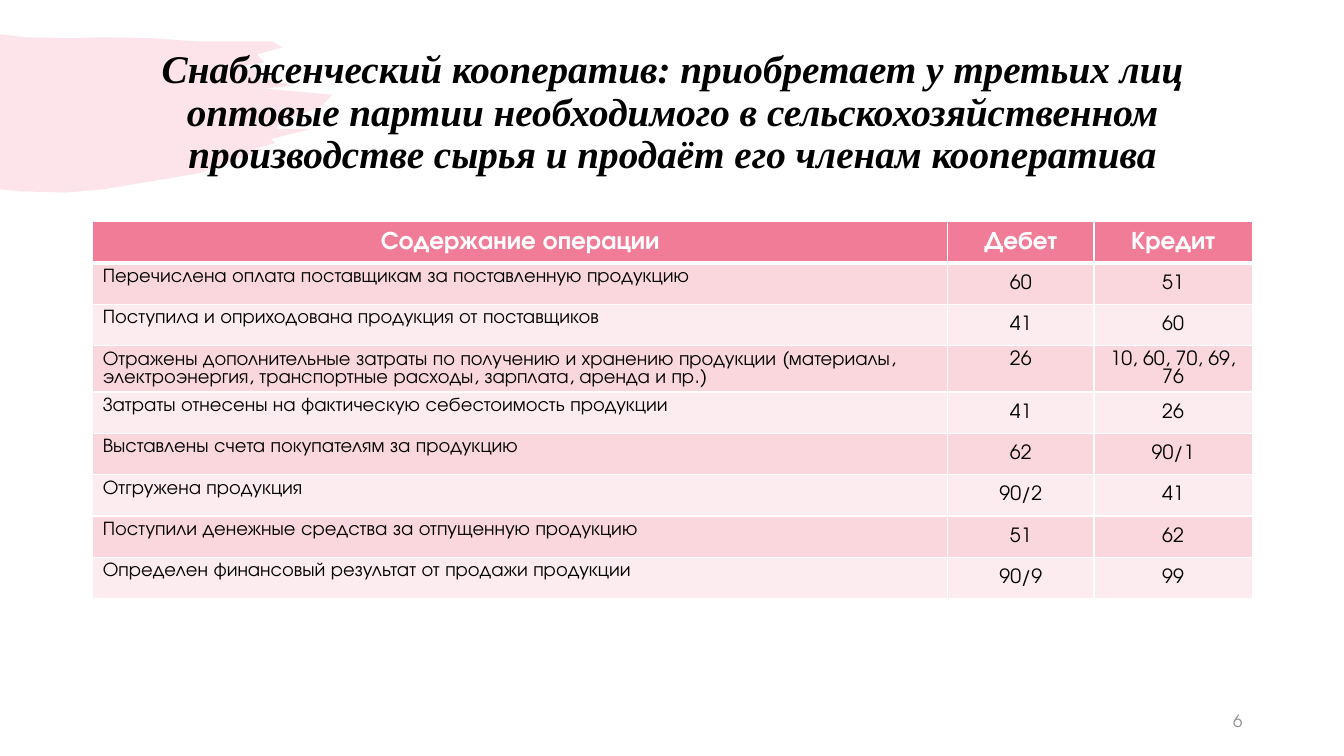
from lxml.etree import SubElement
from pptx import Presentation
from pptx.dml.color import RGBColor
from pptx.enum.text import MSO_ANCHOR as Anchor, PP_ALIGN as Align
from pptx.oxml.ns import qn
from pptx.util import Pt

PX = 9144  # one px is a hundredth of an inch
COLORS = {
    "pink": "F07C98",
    "band_dark": "F9D7DD",
    "band_light": "FCECEF",
    "white": "FFFFFF",
    "black": "000000",
    "grey": "8C8C8C",
}
SANS = "TeX Gyre Adventor"
TITLE_FONT = {"name": "Times New Roman", "size": Pt(28), "bold": True, "italic": True}
HEADER_FONT = {"name": SANS, "size": Pt(18), "bold": True}
CELL_FONT = {"name": SANS, "size": Pt(14), "bold": False}
NUMBER_FONT = {"name": SANS, "size": Pt(12)}

TITLE = ("Снабженческий кооператив: приобретает у третьих лиц оптовые партии "
         "необходимого в сельскохозяйственном производстве сырья и продаёт его "
         "членам кооператива")
COLUMN_WIDTHS = [848, 145, 157]
ROW_HEIGHT, TALL_ROW_HEIGHT, TALL_ROW = 41, 46, 3
ENTRIES = [
    ("Содержание операции", "Дебет", "Кредит"),
    ("Перечислена оплата поставщикам за поставленную продукцию", "60", "51"),
    ("Поступила и оприходована продукция от поставщиков", "41", "60"),
    ("Отражены дополнительные затраты по получению и хранению продукции "
     "(материалы, электроэнергия, транспортные расходы, зарплата, аренда и пр.)",
     "26", "10, 60, 70, 69, 76"),
    ("Затраты отнесены на фактическую себестоимость продукции", "41", "26"),
    ("Выставлены счета покупателям за продукцию", "62", "90/1"),
    ("Отгружена продукция", "90/2", "41"),
    ("Поступили денежные средства за отпущенную продукцию", "51", "62"),
    ("Определен финансовый результат от продажи продукции", "90/9", "99"),
]

# Corners of the brush stroke, clockwise from the top left
BRUSH = [
    (0, 34), (25, 37), (66, 38), (102, 37), (151, 38), (194, 41), (248, 41),
    (270, 41), (280, 47), (255, 54), (262, 62), (238, 66), (275, 74),
    (251, 75), (290, 85), (263, 88), (330, 94), (318, 106), (300, 113),
    (280, 120), (274, 128), (308, 128), (269, 138), (273, 142), (252, 148),
    (263, 148), (197, 172), (102, 188), (65, 191), (23, 190), (0, 188),
]


def rgb(color):
    return RGBColor.from_string(COLORS[color])


def place(shape, *box):
    for side, length in zip(("left", "top", "width", "height"), box):
        setattr(shape, side, length * PX)


def write(frame, text, font, color, align):
    frame.text = text
    paragraph = frame.paragraphs[0]
    paragraph.alignment = align
    run_font = paragraph.runs[0].font
    for attribute, value in font.items():
        setattr(run_font, attribute, value)
    run_font.color.rgb = rgb(color)
    return paragraph


def add_brush(slide):
    start, *corners = BRUSH
    builder = slide.shapes.build_freeform(*start, scale=PX)
    builder.add_line_segments(corners)
    brush = builder.convert_to_shape()
    brush.shadow.inherit = False
    brush.line.fill.background()
    brush.fill.solid()
    brush.fill.fore_color.rgb = rgb("pink")
    tint = next(brush.element.spPr.iter(qn("a:srgbClr")))
    SubElement(tint, qn("a:alpha"), val="20000")
    return brush


def add_title(slide, brush):
    title = slide.shapes.title
    place(title, 92, 40, 1150, 145)
    title.text_frame.vertical_anchor = Anchor.MIDDLE
    paragraph = write(title.text_frame, TITLE, TITLE_FONT, "black", Align.CENTER)
    paragraph.line_spacing = 0.9
    brush.element.addnext(title.element)  # title above the brush


def add_page_number(slide):
    number = slide.shapes.add_textbox(942 * PX, 695 * PX, 300 * PX, 40 * PX)
    number.text_frame.word_wrap = True
    number.text_frame.vertical_anchor = Anchor.MIDDLE
    write(number.text_frame, "6", NUMBER_FONT, "grey", Align.RIGHT)


def set_borders(cell, row):
    properties = cell._tc.get_or_add_tcPr()
    widths = {"L": 1, "R": 1, "T": 3 if row == 1 else 1, "B": 3 if row == 0 else 1}
    for side, width in widths.items():
        border = SubElement(properties, qn(f"a:ln{side}"), w=str(int(Pt(width))))
        SubElement(SubElement(border, qn("a:solidFill")), qn("a:srgbClr"),
                   val=COLORS["white"])


def format_cell(cell, row, column, text):
    header = row == 0
    description = column == 0 and not header
    top = description or (row == TALL_ROW and column == 1)
    write(cell.text_frame, text,
          HEADER_FONT if header else CELL_FONT,
          "white" if header else "black",
          Align.LEFT if description else Align.CENTER)
    cell.vertical_anchor = Anchor.TOP if top else Anchor.MIDDLE
    set_borders(cell, row)
    cell.fill.solid()
    band = "band_dark" if row % 2 else "band_light"
    cell.fill.fore_color.rgb = rgb("pink" if header else band)


def add_entries(slide):
    heights = [TALL_ROW_HEIGHT if row == TALL_ROW else ROW_HEIGHT
               for row in range(len(ENTRIES))]
    entries = slide.shapes.add_table(
        len(ENTRIES), len(COLUMN_WIDTHS), 92 * PX, 220 * PX,
        sum(COLUMN_WIDTHS) * PX, sum(heights) * PX).table
    for column, width in zip(entries.columns, COLUMN_WIDTHS):
        column.width = width * PX
    for row, height in zip(entries.rows, heights):
        row.height = height * PX
    for row, texts in enumerate(ENTRIES):
        for column, text in enumerate(texts):
            format_cell(entries.cell(row, column), row, column, text)


def main():
    deck = Presentation()
    deck.slide_width, deck.slide_height = 1333 * PX, 750 * PX
    slide = deck.slides.add_slide(deck.slide_layouts[5])
    brush = add_brush(slide)
    add_title(slide, brush)
    add_entries(slide)
    add_page_number(slide)
    deck.save("out.pptx")


if __name__ == "__main__":
    main()
